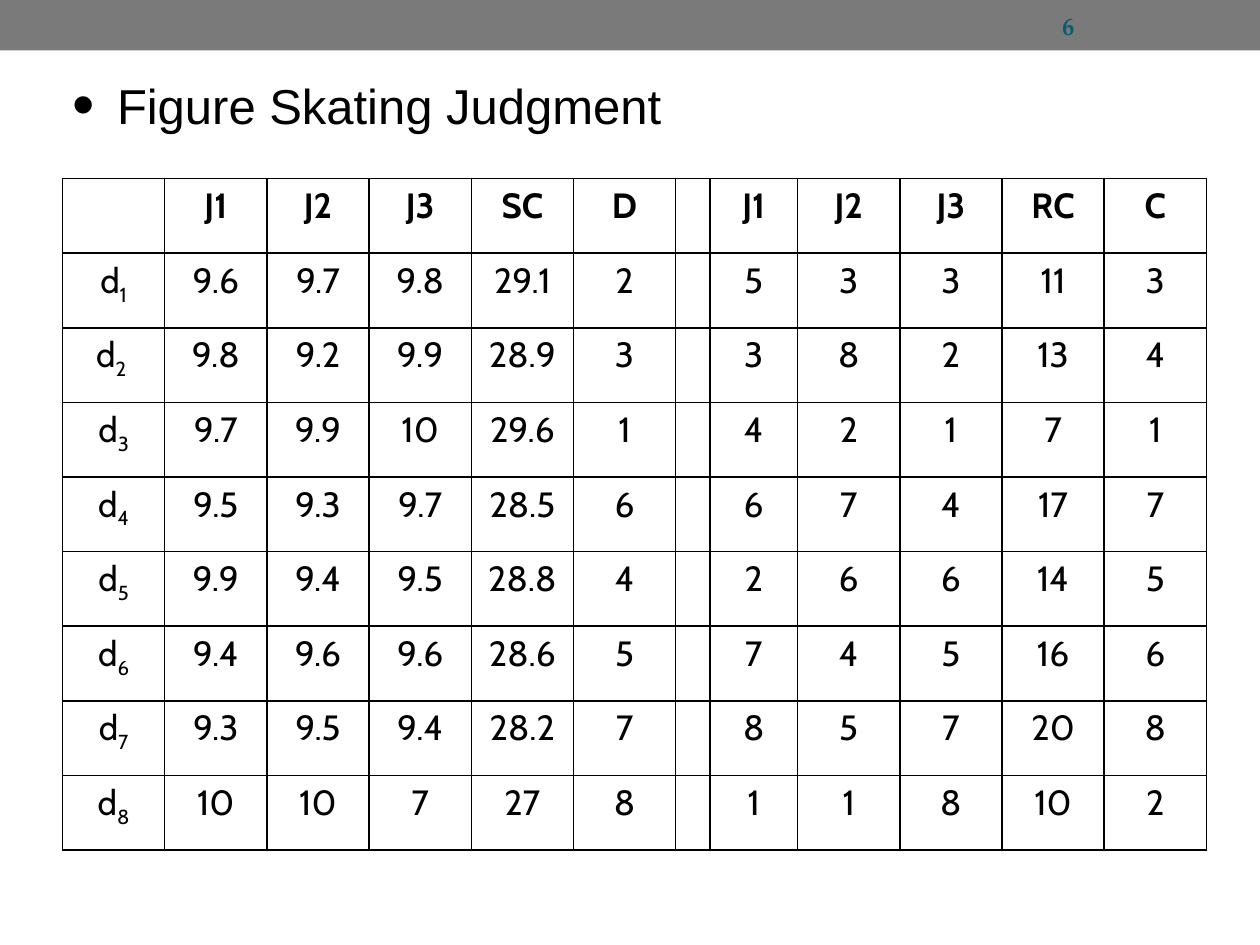
from dataclasses import dataclass

from lxml.etree import SubElement
from pptx import Presentation
from pptx.dml.color import RGBColor
from pptx.enum.shapes import MSO_SHAPE
from pptx.enum.text import MSO_ANCHOR, MSO_AUTO_SIZE, PP_ALIGN
from pptx.oxml.ns import qn
from pptx.util import Cm, Pt

BLACK, GREY, TEAL = "000000", "7A7A7A", "045C75"
HEADER = ["", "J1", "J2", "J3", "SC", "D", "", "J1", "J2", "J3", "RC", "C"]
COL_WIDTHS = [2.06] * 6 + [0.69, 1.77] + [2.06] * 4
TABLE_HEIGHT = 13.54


@dataclass
class Skater:
    index: str
    scores: str
    ranks: str


@dataclass
class Style:
    size: float
    font: str
    color: str = BLACK
    bold: bool = False


SKATERS = [
    Skater("1", "9.6 9.7 9.8 29.1 2", "5 3 3 11 3"),
    Skater("2 ", "9.8 9.2 9.9 28.9 3", "3 8 2 13 4"),
    Skater("3", "9.7 9.9 10 29.6 1", "4 2 1 7 1"),
    Skater("4", "9.5 9.3 9.7 28.5 6", "6 7 4 17 7"),
    Skater("5", "9.9 9.4 9.5 28.8 4", "2 6 6 14 5"),
    Skater("6", "9.4 9.6 9.6 28.6 5", "7 4 5 16 6"),
    Skater("7", "9.3 9.5 9.4 28.2 7", "8 5 7 20 8"),
    Skater("8", "10 10 7 27 8", "1 1 8 10 2"),
]
HEAD = Style(20, "Cabin", bold=True)
BODY = Style(20, "Cabin")
PAGE = Style(14, "TeX Gyre Pagella", TEAL, True)
TITLE = Style(28, "Arial")


def rgb(value: str) -> RGBColor:
    return RGBColor.from_string(value)


def add_run(p, text: str, style: Style, baseline: int = 0) -> None:
    r = p.add_run()
    r.text = text
    r.font.size = Pt(style.size)
    r.font.name = style.font
    r.font.bold = style.bold
    r.font.color.rgb = rgb(style.color)
    if baseline:
        r.font._element.set("baseline", str(baseline * 1000))


def add_borders(cell) -> None:
    tc_pr = cell._tc.get_or_add_tcPr()
    for i, side in enumerate(("lnL", "lnR", "lnT", "lnB")):
        ln = tc_pr.makeelement(qn(f"a:{side}"), {"w": str(Pt(1))})
        fill = SubElement(ln, qn("a:solidFill"))
        SubElement(fill, qn("a:srgbClr"), val=BLACK)
        tc_pr.insert(i, ln)


def add_scores(s) -> None:
    rows = [HEADER] + [
        [k.index, *k.scores.split(), "", *k.ranks.split()] for k in SKATERS
    ]
    frame = s.shapes.add_table(
        len(rows), len(HEADER), Cm(1.26), Cm(3.6), Cm(sum(COL_WIDTHS)), Cm(TABLE_HEIGHT)
    )
    table = frame.table
    table.first_row = table.horz_banding = False
    for column, width in zip(table.columns, COL_WIDTHS):
        column.width = Cm(width)
    for i, values in enumerate(rows):
        table.rows[i].height = Cm(TABLE_HEIGHT / len(rows))
        for j, text in enumerate(values):
            cell = table.cell(i, j)
            cell.fill.background()
            add_borders(cell)
            p = cell.text_frame.paragraphs[0]
            p.alignment = PP_ALIGN.CENTER
            if i and j == 0:
                add_run(p, "d", BODY)
                add_run(p, text, BODY, -25)
            elif text:
                add_run(p, text, BODY if i else HEAD)


def add_text(s, left: float, top: float, width: float, height: float, text: str, style: Style):
    tf = s.shapes.add_textbox(Cm(left), Cm(top), Cm(width), Cm(height)).text_frame
    tf.word_wrap = True
    tf.auto_size = MSO_AUTO_SIZE.SHAPE_TO_FIT_TEXT
    add_run(tf.paragraphs[0], text, style)
    return tf


def add_bullet(p) -> None:
    p_pr = p._p.get_or_add_pPr()
    p_pr.set("marL", str(Cm(1.27)))
    p_pr.set("indent", str(Cm(-0.89)))
    SubElement(SubElement(p_pr, qn("a:buClr")), qn("a:srgbClr"), val=BLACK)
    SubElement(p_pr, qn("a:buSzPct"), val="130000")
    SubElement(p_pr, qn("a:buFont"), typeface="Arial")
    SubElement(p_pr, qn("a:buChar"), char="•")


def main() -> None:
    prs = Presentation()
    prs.slide_width, prs.slide_height = Cm(25.4), Cm(19.05)
    s = prs.slides.add_slide(prs.slide_layouts[6])

    band = s.shapes.add_shape(MSO_SHAPE.RECTANGLE, 0, 0, prs.slide_width, Cm(1.02))
    band.shadow.inherit = False
    band.fill.solid()
    band.fill.fore_color.rgb = rgb(GREY)
    band.line.fill.background()

    add_scores(s)
    page = add_text(s, 21.16, 0.08, 2.97, 0.86, "6", PAGE)
    page.vertical_anchor = MSO_ANCHOR.MIDDLE
    title = add_text(s, 0.84, 1.27, 13.54, 1.7, "Figure Skating Judgment", TITLE)
    title.margin_top = title.margin_bottom = Cm(0.25)
    add_bullet(title.paragraphs[0])
    prs.save("out.pptx")


if __name__ == "__main__":
    main()
